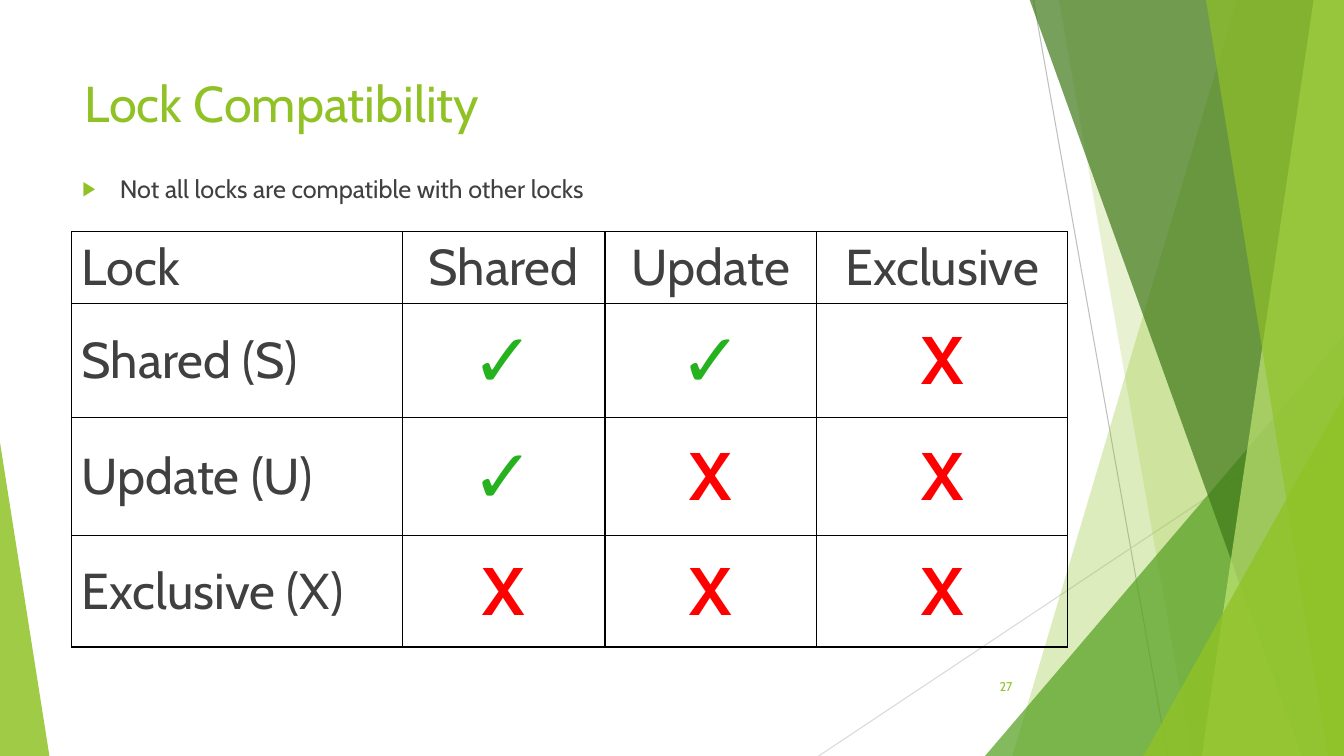
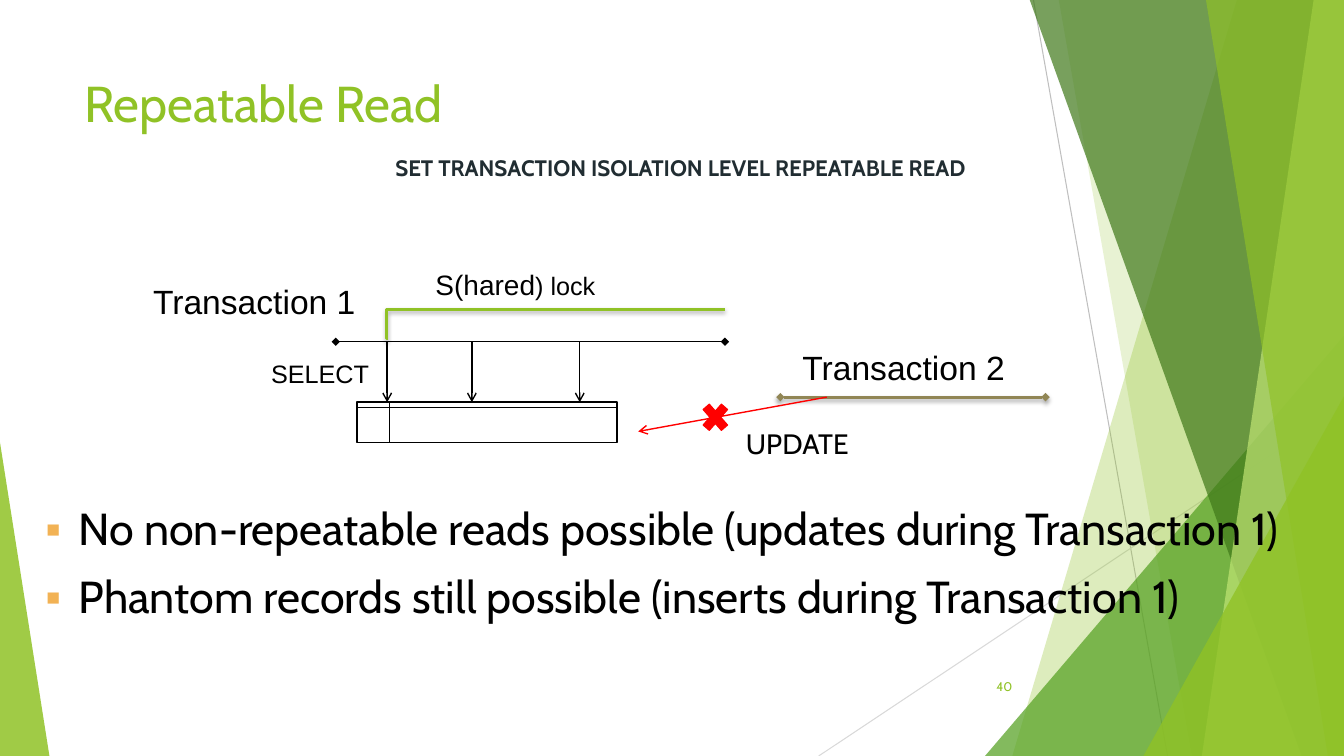
import lxml.etree
import pptx
import pptx.dml.color
import pptx.enum.shapes
import pptx.enum.text
import pptx.oxml.ns
import pptx.util

Inches = pptx.util.Inches
Pt = pptx.util.Pt
qn = pptx.oxml.ns.qn
rgb = pptx.dml.color.RGBColor.from_string
SubElement = lxml.etree.SubElement
SHAPE = pptx.enum.shapes.MSO_SHAPE
CONNECTOR = pptx.enum.shapes.MSO_CONNECTOR
ALIGN = pptx.enum.text.PP_ALIGN
MIDDLE = pptx.enum.text.MSO_ANCHOR.MIDDLE
FIT = pptx.enum.text.MSO_AUTO_SIZE.SHAPE_TO_FIT_TEXT

GREEN, DARK, BLACK, RED = "90C226", "404040", "000000", "FF0000"
WIDTH, HEIGHT = 13.33, 7.5


def write(shapes, at, lines, size, colour, font="Cabin", align=ALIGN.LEFT):
    """Add a wrapping text box with one paragraph per line; return its frame."""
    frame = shapes.add_textbox(*map(Inches, at)).text_frame
    frame.word_wrap = True
    frame.text = "\n".join(lines)
    for para in frame.paragraphs:
        para.alignment = align
        para.font.name = font
        para.font.size = Pt(size)
        para.font.color.rgb = rgb(colour)
    return frame


def connect(shapes, points, colour, width, head=None, tail=None,
            kind=CONNECTOR.STRAIGHT, shadow=False):
    """Add a connector with optional line ends and a soft drop shadow."""
    line = shapes.add_connector(kind, *map(Inches, points))
    line.line.color.rgb = rgb(colour)
    line.line.width = Pt(width)
    outline = line.line._get_or_add_ln()
    for tag, end in (("a:headEnd", head), ("a:tailEnd", tail)):
        if end:
            SubElement(outline, qn(tag), type=end)
    effects = SubElement(line._element.spPr, qn("a:effectLst"))
    if shadow:
        drop = SubElement(effects, qn("a:outerShdw"), blurRad=str(Pt(3)),
                          dist=str(Pt(2)), dir="5400000", rotWithShape="0")
        tint = SubElement(drop, qn("a:srgbClr"), val=BLACK)
        SubElement(tint, qn("a:alpha"), val="35000")
    return line


deck = pptx.Presentation()
deck.slide_width = Inches(WIDTH)
deck.slide_height = Inches(HEIGHT)

# Shared backdrop, title and slide number
# Ribbon: top x, bottom x. Triangle: left, top, width, apex position.
facets = [
    ((12.27, 10.04), GREEN, 30),
    ((10.5, 11.82), GREEN, 20),
    ((9.77, 3.33, 3.56, 1), "54A021", 72),
    ((10.21, 12.91), "3F7819", 70),
    ((13.03, 11.92), "C0E474", 70),
    ((11.96, 13.17), GREEN, 65),
    ((11.34, 3.93, 1.99, 1), GREEN, 80),
    ((0, 4.39, 0.49, 0), GREEN, 85),
]
pages = []
for title, number in (("Lock Compatibility", "27"), ("Repeatable Read", "40")):
    page = deck.slides.add_slide(deck.slide_layouts[6])
    pages.append(page)
    backdrop = page.shapes.add_group_shape().shapes
    connect(backdrop, (10.25, 0, 11.58, HEIGHT), "BFBFBF", 0.75)
    connect(backdrop, (WIDTH, 4.03, 8.12, HEIGHT), "D9D9D9", 0.75)
    for geometry, colour, opacity in facets:
        if len(geometry) == 2:
            top_x, bottom_x = geometry
            outline = backdrop.build_freeform(Inches(top_x), Inches(-0.01))
            corners = [(WIDTH, -0.01), (WIDTH, HEIGHT), (bottom_x, HEIGHT)]
            outline.add_line_segments([(Inches(x), Inches(y)) for x, y in corners])
            facet = outline.convert_to_shape()
        else:
            left, top, width, apex = geometry
            facet = backdrop.add_shape(
                SHAPE.ISOSCELES_TRIANGLE, Inches(left), Inches(top),
                Inches(width), Inches(HEIGHT - top))
            facet.adjustments[0] = apex
        facet.shadow.inherit = False
        facet.line.fill.background()
        facet.fill.solid()
        facet.fill.fore_color.rgb = rgb(colour)
        tint = facet._element.spPr.find(qn("a:solidFill"))[0]
        SubElement(tint, qn("a:alpha"), val=str(opacity * 1000))
    write(page.shapes, (0.74, 0.67, 9.4, 1.44), [title], 36, GREEN)
    footer = write(page.shapes, (9.39, 6.61, 0.75, 0.4), [number], 9, GREEN,
                   align=ALIGN.RIGHT)
    footer.vertical_anchor = MIDDLE
locks, read = pages

# Lock Compatibility
intro = write(locks.shapes, (0.72, 1.67, 9.4, 0.5),
              ["Not all locks are compatible with other locks"], 18, DARK)
intro.paragraphs[0].space_before = Pt(10)

rows = [
    ("Lock", "Shared", "Update", "Exclusive"),
    ("Shared (S)", "✓", "✓", "X"),
    ("Update (U)", "✓", "X", "X"),
    ("Exclusive (X)", "X", "X", "X"),
]
marks = {"✓": (54, "25B21E", True), "X": (48, RED, True)}
table = locks.shapes.add_table(
    4, 4, Inches(0.71), Inches(2.3), Inches(9.88), Inches(4.12)).table
table.first_row = table.horz_banding = False
for column, width in zip(table.columns, (3.28, 2.01, 2.1, 2.49)):
    column.width = Inches(width)
for row, height in zip(table.rows, (0.71, 1.13, 1.17, 1.11)):
    row.height = Inches(height)
for row, texts in zip(table.rows, rows):
    for index, (cell, text) in enumerate(zip(row.cells, texts)):
        size, colour, bold = marks.get(text, (36, DARK, False))
        cell.text = text
        cell.vertical_anchor = MIDDLE
        para = cell.text_frame.paragraphs[0]
        para.alignment = ALIGN.CENTER if index else ALIGN.LEFT
        para.font.name = "Cabin"
        para.font.size = Pt(size)
        para.font.bold = bold
        para.font.color.rgb = rgb(colour)
        properties = cell._tc.get_or_add_tcPr()
        for side in ("a:lnL", "a:lnR", "a:lnT", "a:lnB"):
            border = SubElement(properties, qn(side), w=str(Pt(1)))
            SubElement(SubElement(border, qn("a:solidFill")), qn("a:srgbClr"), val=BLACK)
        cell.fill.background()

# Repeatable Read
statement = write(read.shapes, (0.83, 1.45, 11.67, 0.72),
                  ["SET TRANSACTION ISOLATION LEVEL REPEATABLE READ"],
                  16, "212D32", align=ALIGN.CENTER).paragraphs[0]
statement.font.bold = True
statement.line_spacing = 1.1
statement.space_before = Pt(10)
statement._p.get_or_add_pPr().set("marL", str(Inches(0.17)))

effects = write(read.shapes, (0.33, 4.97, 12.67, 1.9), [
    "No non-repeatable reads possible (updates during Transaction 1)",
    "Phantom records still possible (inserts during Transaction 1)",
], 32, BLACK)
effects.margin_left = effects.margin_right = Inches(0.12)
effects.margin_top = effects.margin_bottom = Inches(0.04)
for para in effects.paragraphs:
    para.line_spacing = 0.95
    para.space_before = para.space_after = Pt(6)

diagram = read.shapes.add_group_shape().shapes
connect(diagram, (3.33, 3.39, 7.19, 3.39), BLACK, 1, "diamond", "diamond")
for x in (3.84, 4.68, 5.75):
    connect(diagram, (x, 3.39, x, 3.99), BLACK, 1, tail="arrow")
record = diagram.add_shape(SHAPE.FLOWCHART_INTERNAL_STORAGE, Inches(3.54),
                           Inches(3.99), Inches(2.58), Inches(0.4))
record.shadow.inherit = False
record.fill.background()
record.line.color.rgb = rgb(BLACK)
record.line.width = Pt(1)

lock_span = connect(diagram, (3.84, 3.36, 7.19, 3.07), GREEN, 2,
                    kind=CONNECTOR.ELBOW, shadow=True)
guides = lock_span._element.spPr.find(qn("a:prstGeom")).get_or_add_avLst()
SubElement(guides, qn("a:gd"), name="adj1", fmla="val -100")
connect(diagram, (7.74, 3.94, 10.37, 3.94), "918655", 2, "diamond", "diamond",
        shadow=True)
connect(diagram, (8.2, 3.94, 6.33, 4.28), RED, 1, tail="arrow")

labels = [
    ("Transaction 1", (1.42, 2.74, 2.26, 0.5), 24, "Arial"),
    ("SELECT", (2.59, 3.51, 1.25, 0.4), 18, "Arial"),
    ("UPDATE", (7.3, 4.18, 1.28, 0.44), 20, "Cabin"),
    ("Transaction 2", (7.86, 3.39, 2.6, 0.5), 24, "Arial"),
    ("S(hared", (4.22, 2.6, 2.44, 0.44), 20, "Arial"),
]
for text, at, size, font in labels:
    label = write(diagram, at, [text], size, BLACK, font)
    label.auto_size = FIT
span = label.paragraphs[0].add_run()
span.text = ") lock"
span.font.size = Pt(18)

blocked = diagram.add_shape(SHAPE.MATH_MULTIPLY, Inches(6.92), Inches(3.94),
                            Inches(0.35), Inches(0.4))
blocked.shadow.inherit = False
blocked.fill.solid()
blocked.fill.fore_color.rgb = rgb(RED)
blocked.line.color.rgb = rgb(RED)
blocked.line.width = Pt(0.75)

# Bullets on both slides
for frame, mark, colour, percent, indent in (
    (intro, "▶", GREEN, 80, 0.37),
    (effects, "▪", "F2B254", 100, 0.33),
):
    for para in frame.paragraphs:
        properties = para._p.get_or_add_pPr()
        properties.set("marL", str(Inches(indent)))
        properties.set("indent", str(-Inches(indent)))
        SubElement(SubElement(properties, qn("a:buClr")), qn("a:srgbClr"), val=colour)
        SubElement(properties, qn("a:buSzPct"), val=str(percent * 1000))
        SubElement(properties, qn("a:buFont"), typeface="Arial")
        SubElement(properties, qn("a:buChar"), char=mark)
        # Bullets precede the default run properties
        for default in properties.findall(qn("a:defRPr")):
            properties.append(default)

deck.save("out.pptx")
